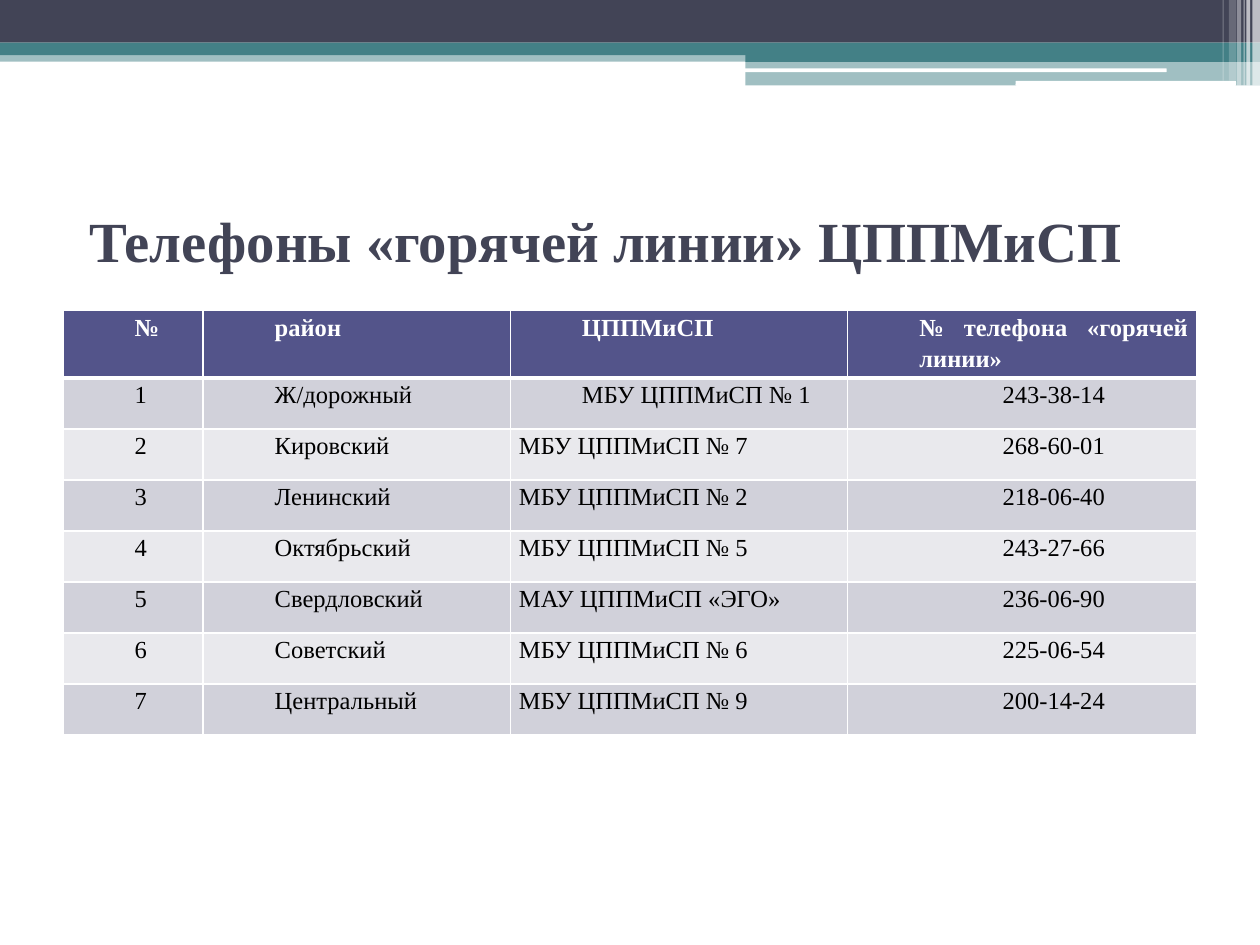
from lxml.etree import SubElement as Sub
from pptx import Presentation
from pptx.dml.color import RGBColor as Rgb
from pptx.enum.shapes import MSO_SHAPE as Kind
from pptx.enum.text import MSO_ANCHOR as Anchor, PP_ALIGN as Align
from pptx.oxml.ns import qn
from pptx.util import Pt

HUES = {
    "dark": "424456", "teal": "438086", "white": "FFFFFF", "black": "000000",
    "head": "53548A", "odd": "D1D1DA", "even": "E9E9ED",
}
FONT = "Times New Roman"
HEADS = ["№", "район", "ЦППМиСП", "№ телефона «горячей линии»"]
ROWS = [
    ("Ж/дорожный", "МБУ ЦППМиСП № 1", "243-38-14"),
    ("Кировский", "МБУ ЦППМиСП № 7", "268-60-01"),
    ("Ленинский", "МБУ ЦППМиСП № 2", "218-06-40"),
    ("Октябрьский", "МБУ ЦППМиСП № 5", "243-27-66"),
    ("Свердловский", "МАУ ЦППМиСП «ЭГО»", "236-06-90"),
    ("Советский", "МБУ ЦППМиСП № 6", "225-06-54"),
    ("Центральный", "МБУ ЦППМиСП № 9", "200-14-24"),
]
BANDS = [
    (0, 28.8, 720, 6.5, "teal", 50), (0, 0, 720, 24.4, "dark", 100),
    (0, 24.4, 720, 7.2, "teal", 100), (425.9, 28.2, 294.1, 7.2, "teal", 100),
    (425.9, 35.3, 294.1, 13.5, "teal", 50),
]
BARS = [(425.5, 39.1, 241.2, 2.2), (580.3, 46.2, 126, 2.8)]
STRIPES = [
    (715.7, 4.3, 48.9, 65), (712.2, 2.2, 48.9, 65), (710.6, 0.7, 48.9, 60),
    (707, 2.2, 48.9, 40), (702.2, 4.3, 46.1, 20), (698.6, 0.7, 46.1, 30),
]


def put_text(frame, text, size=14, hue="black", bold=False, align=Align.LEFT, indent=0, space=1):
    """Write one formatted paragraph into a text frame."""
    para = frame.paragraphs[0]
    para.alignment, para.line_spacing = align, space
    if indent:
        para._p.get_or_add_pPr().set("marL", str(Pt(indent)))
    run = para.add_run()
    run.text = text
    font = run.font
    font.name, font.size, font.bold = FONT, Pt(size), bold
    font.color.rgb = Rgb.from_string(HUES[hue])


def add_block(slide, box, hue, alpha=100, kind=Kind.RECTANGLE):
    """Add a plain filled shape, see-through if alpha is below 100."""
    shape = slide.shapes.add_shape(kind, *map(Pt, box))
    shape.shadow.inherit = False
    shape.line.fill.background()
    shape.fill.solid()
    shape.fill.fore_color.rgb = Rgb.from_string(HUES[hue])
    if alpha < 100:
        tint = shape._element.spPr.find(qn("a:solidFill"))[0]
        Sub(tint, qn("a:alpha"), val=str(alpha * 1000))
    return shape


def add_banner(slide, left, top):
    """Draw the bands, bars and stripes along the top edge."""
    for x, y, wide, high, hue, alpha in BANDS:
        add_block(slide, (left + x, top + y, wide, high), hue, alpha)
    for x, y, wide, high in BARS:
        bar = add_block(slide, (left + x, top + y, wide, high), "white", kind=Kind.ROUNDED_RECTANGLE)
        bar.adjustments[0] = 0.17
    for x, wide, high, alpha in STRIPES:
        add_block(slide, (left + x, top, wide, high), "white", alpha)


def add_title(slide, left, top, wide, high):
    """Place the slide heading."""
    frame = slide.shapes.add_textbox(*map(Pt, (left, top, wide, high))).text_frame
    frame.word_wrap = True
    frame.vertical_anchor = Anchor.MIDDLE
    frame.margin_left, frame.margin_top, frame.margin_bottom = Pt(15), Pt(10), 0
    put_text(frame, "Телефоны «горячей линии» ЦППМиСП", size=32.4, hue="dark", bold=True)


def style_cell(cell, hue, top=1, base=1):
    """Set margins, borders and fill of a table cell."""
    cell.margin_left = cell.margin_right = Pt(5)
    cell.margin_top = cell.margin_bottom = 0
    props = cell._tc.get_or_add_tcPr()
    for side, width in zip("LRTB", (1, 1, top, base)):
        line = Sub(props, qn(f"a:ln{side}"), w=str(Pt(width)))
        Sub(Sub(line, qn("a:solidFill")), qn("a:srgbClr"), val=HUES["white"])
    cell.fill.solid()
    cell.fill.fore_color.rgb = Rgb.from_string(HUES[hue])


def add_phones(slide, left, top, wide, high):
    """Build the table of hotline numbers."""
    data = [HEADS] + [(str(n), *row) for n, row in enumerate(ROWS, 1)]
    table = slide.shapes.add_table(len(data), len(HEADS), *map(Pt, (left, top, wide, high))).table
    table.horz_banding = False
    for col, size in zip(table.columns, (80, 175.6, 192.8, 199.6)):
        col.width = Pt(size)
    for r, row in enumerate(data):
        table.rows[r].height = Pt(high / len(data))
        head = r == 0
        hue = "head" if head else "odd" if r % 2 else "even"
        aligns = [Align.JUSTIFY] * 4 if head else [Align.JUSTIFY] * 2 + [Align.LEFT, Align.CENTER]
        for c, text in enumerate(row):
            cell = table.cell(r, c)
            style_cell(cell, hue, top=3 if r == 1 else 1, base=3 if head else 1)
            put_text(
                cell.text_frame, text, hue="white" if head else "black", bold=head,
                align=aligns[c], indent=0 if c == 2 and r > 1 else 36, space=1.15,
            )


def main():
    """Build and save the slide."""
    deck = Presentation()
    deck.slide_width, deck.slide_height = Pt(720), Pt(540)
    slide = deck.slides.add_slide(deck.slide_layouts[6])
    add_banner(slide, 0, 0)
    add_title(slide, 36, 90, 648, 84)
    add_phones(slide, 36, 177.4, 648, 233.2)
    deck.save("out.pptx")


if __name__ == "__main__":
    main()
